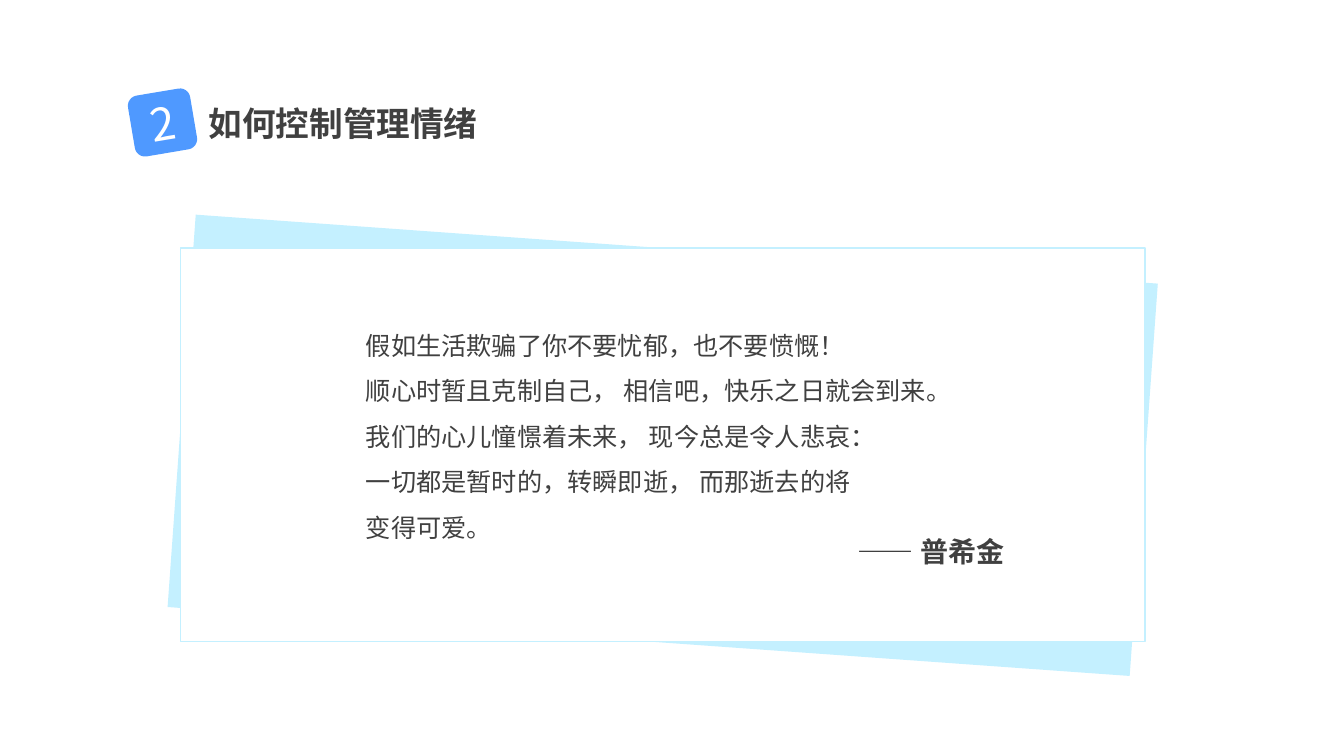
import dataclasses

import pptx
import pptx.dml.color
import pptx.enum.shapes
import pptx.enum.text
import pptx.oxml.ns
import pptx.util
from lxml import etree

Pt = pptx.util.Pt
MSO_SHAPE = pptx.enum.shapes.MSO_SHAPE
PP_ALIGN = pptx.enum.text.PP_ALIGN
MSO_ANCHOR = pptx.enum.text.MSO_ANCHOR


@dataclasses.dataclass(frozen=True)
class Theme:
    """Colours, type sizes and font of the deck."""
    font: str = "Noto Sans CJK SC"
    text: str = "404040"
    white: str = "FFFFFF"
    badge: str = "4F99FF"
    card: str = "C4F0FF"
    number_size: int = 32
    title_size: int = 24
    author_size: int = 20
    body_size: int = 18
    body_leading: float = 32.4


THEME = Theme()
POEM = [
    "假如生活欺骗了你不要忧郁，也不要愤慨！",
    "顺心时暂且克制自己， 相信吧，快乐之日就会到来。",
    "我们的心儿憧憬着未来， 现今总是令人悲哀：",
    "一切都是暂时的，转瞬即逝， 而那逝去的将",
    "变得可爱。",
]


def rgb(color):
    """Turn a hex string into a colour."""
    return pptx.dml.color.RGBColor.from_string(color)


def place(sp, x, y, w, h):
    """Move and size a shape in points."""
    sp.left, sp.top, sp.width, sp.height = Pt(x), Pt(y), Pt(w), Pt(h)


def style_text(tf, size, color, bold=False, align=PP_ALIGN.LEFT,
               anchor=MSO_ANCHOR.MIDDLE, wrap=True):
    """Format every paragraph and run of a text frame."""
    tf.auto_size = pptx.enum.text.MSO_AUTO_SIZE.NONE
    tf.vertical_anchor = anchor
    tf.word_wrap = wrap
    for p in tf.paragraphs:
        p.alignment = align
        for r in p.runs:
            r.font.name = THEME.font
            r.font.size = Pt(size)
            r.font.bold = bold
            r.font.color.rgb = rgb(color)
            ea = etree.SubElement(r.font._element, pptx.oxml.ns.qn("a:ea"))
            ea.set("typeface", THEME.font)


def add_block(slide, kind, box, fill, line=None, rotation=0):
    """Add a flat filled shape."""
    sp = slide.shapes.add_shape(kind, *map(Pt, box))
    sp.shadow.inherit = False
    sp.rotation = rotation
    sp.fill.solid()
    sp.fill.fore_color.rgb = rgb(fill)
    if line:
        sp.line.color.rgb = rgb(line)
        sp.line.width = Pt(1)
    else:
        sp.line.fill.background()
    return sp


def add_heading(slide, x, y, number, title):
    """Place the tilted number badge and the title beside it."""
    badge = add_block(slide, MSO_SHAPE.ROUNDED_RECTANGLE, (x, y, 45, 44),
                      THEME.badge, rotation=-9.6)
    badge.text_frame.text = number
    style_text(badge.text_frame, THEME.number_size, THEME.white,
               align=PP_ALIGN.CENTER)
    sp = slide.shapes.title
    place(sp, x + 48.3, y + 4.3, 208, 36)
    sp.text_frame.text = title
    style_text(sp.text_frame, THEME.title_size, THEME.text, bold=True, wrap=False)


def add_card(slide, x, y, w, h):
    """Place the white card over its tilted backing, behind all text."""
    backing = add_block(slide, MSO_SHAPE.RECTANGLE, (x, y + 0.5, w, h),
                        THEME.card, rotation=4.1)
    front = add_block(slide, MSO_SHAPE.RECTANGLE, (x, y, w, h),
                      THEME.white, line=THEME.card)
    for sp in (front, backing):
        sp.element.getparent().insert(2, sp.element)


def add_quote(slide, x, y, w, h, lines, author):
    """Place the card, the quoted lines and the author inside the box."""
    add_card(slide, x, y, w, h)
    body = slide.placeholders[1]
    place(body, x + 125.3, y + 44.5, 440, 171)
    tf = body.text_frame
    tf.text = "\n".join(lines)
    style_text(tf, THEME.body_size, THEME.text, anchor=MSO_ANCHOR.TOP)
    for p in tf.paragraphs:
        p.line_spacing = Pt(THEME.body_leading)
        p.space_before = p.space_after = Pt(0)
        pPr = p._p.get_or_add_pPr()
        pPr.set("marL", "0")
        pPr.set("indent", "0")
        etree.SubElement(pPr, pptx.oxml.ns.qn("a:buNone"))

    sp = slide.shapes.add_textbox(Pt(x + 472.3), Pt(y + 200.9), Pt(137), Pt(32))
    sp.text_frame.text = author
    style_text(sp.text_frame, THEME.author_size, THEME.text, bold=True, wrap=False)


def main():
    """Build and save the deck."""
    prs = pptx.Presentation()
    prs.slide_width, prs.slide_height = Pt(960), Pt(540)
    slide = prs.slides.add_slide(prs.slide_layouts[1])
    add_heading(slide, 93.6, 65.5, "2", "如何控制管理情绪")
    add_quote(slide, 128.9, 177.1, 689, 281, POEM, " —— 普希金")
    prs.save("out.pptx")


if __name__ == "__main__":
    main()
